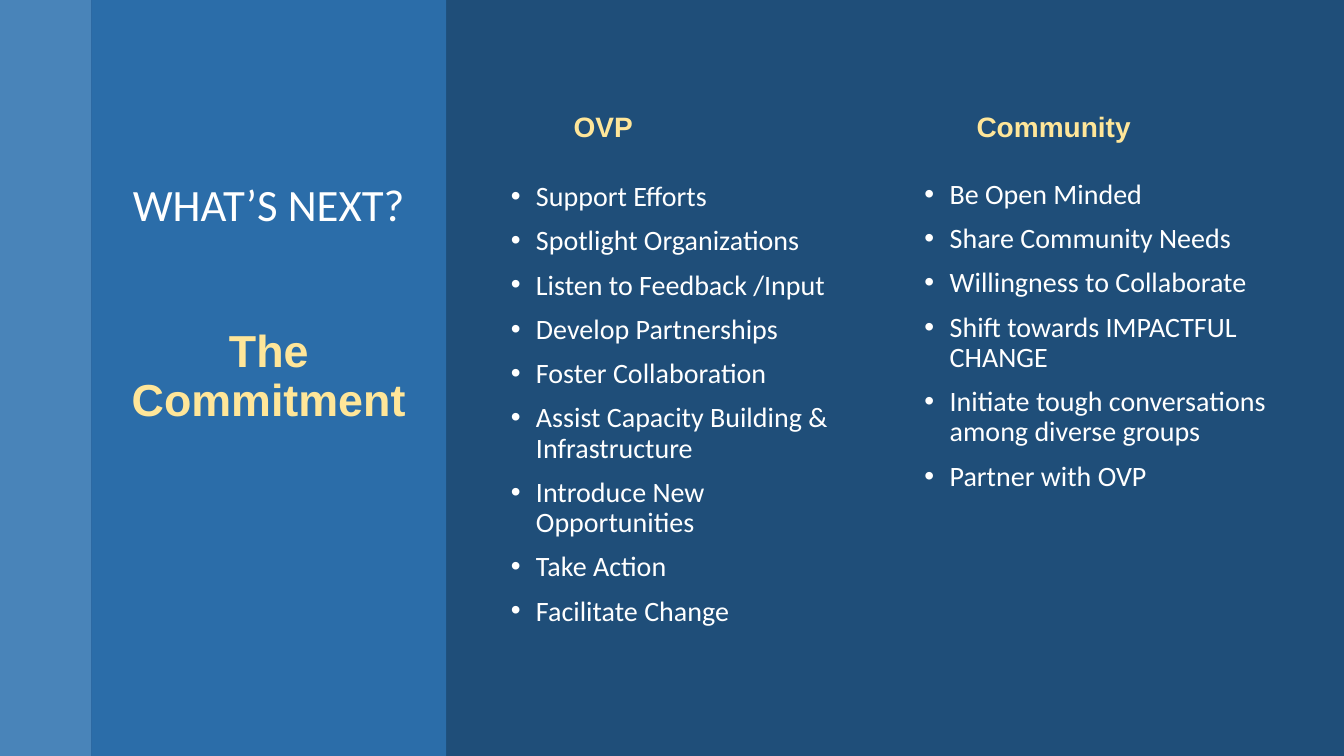
from lxml import etree
from pptx import Presentation, util as u
from pptx.dml.color import RGBColor
from pptx.enum import shapes, text
from pptx.oxml import ns

PX = 9525  # EMU in one px
WIDTH, HEIGHT = 1280, 720
TITLE_ONLY = 5

NAVY = RGBColor(0x1F, 0x4E, 0x79)
SKY = RGBColor(0x5B, 0x9B, 0xD5)
BLUE = RGBColor(0x2E, 0x75, 0xB6)
WHITE = RGBColor(0xFF, 0xFF, 0xFF)
CREAM = RGBColor(0xFF, 0xE6, 0x99)

TITLE = "WHAT’S NEXT?"
SUBTITLE = "The Commitment"
OVP = [
    "Support Efforts",
    "Spotlight Organizations",
    "Listen to Feedback /Input",
    "Develop Partnerships",
    "Foster Collaboration",
    "Assist Capacity Building & Infrastructure",
    "Introduce New Opportunities",
    "Take Action",
    "Facilitate Change",
]
COMMUNITY = [
    "Be Open Minded",
    "Share Community Needs",
    "Willingness to Collaborate",
    "Shift towards IMPACTFUL CHANGE",
    "Initiate tough conversations among diverse groups",
    "Partner with OVP",
]


def emu(box):
    return [u.Emu(length * PX) for length in box]


def add_bullet(paragraph, indent=24):
    properties = paragraph._p.get_or_add_pPr()
    properties.set("marL", str(indent * PX))
    properties.set("indent", str(-indent * PX))
    font = etree.SubElement(properties, ns.qn("a:buFont"))
    font.set("typeface", "Arial")
    etree.SubElement(properties, ns.qn("a:buChar")).set("char", "•")


def write(frame, words, *, size=20, font="Calibri", color=WHITE, bold=False,
          align=text.PP_ALIGN.LEFT, line=1.0, before=0, bullet=False):
    """Write one paragraph, using the empty first one if there is one."""
    first = not frame.text
    paragraph = frame.paragraphs[0] if first else frame.add_paragraph()
    if bullet:
        add_bullet(paragraph)
    paragraph.alignment = align
    paragraph.line_spacing = line
    paragraph.space_before = u.Pt(0 if first else before)
    run = paragraph.add_run()
    run.text = words
    run.font.size = u.Pt(size)
    run.font.name = font
    run.font.bold = bold
    run.font.color.rgb = color


def prepare(frame):
    frame.word_wrap = True
    frame.auto_size = text.MSO_AUTO_SIZE.NONE
    frame.vertical_anchor = text.MSO_ANCHOR.TOP
    return frame


def add_frame(slide, box):
    return prepare(slide.shapes.add_textbox(*emu(box)).text_frame)


def add_panel(slide, box, color, opacity):
    panel = slide.shapes.add_shape(shapes.MSO_SHAPE.RECTANGLE, *emu(box))
    panel.shadow.inherit = False
    panel.line.fill.background()
    panel.fill.solid()
    panel.fill.fore_color.rgb = color
    fill_color = panel._element.spPr.find(".//" + ns.qn("a:srgbClr"))
    etree.SubElement(fill_color, ns.qn("a:alpha")).set("val", str(opacity * 1000))


def add_title(slide, box):
    title = slide.shapes.title
    slide.shapes._spTree.append(title._element)  # in front of the panels
    title.left, title.top, title.width, title.height = emu(box)
    frame = prepare(title.text_frame)
    centre = text.PP_ALIGN.CENTER
    write(frame, TITLE, size=32, align=centre, line=0.9)
    write(frame, SUBTITLE, size=32, font="Arial", color=CREAM, bold=True,
          align=centre, line=0.9, before=70)


def add_column(slide, box, items):
    frame = add_frame(slide, box)
    for item in items:
        write(frame, item, line=0.9, before=10, bullet=True)


def add_heading(slide, box, words):
    write(add_frame(slide, box), words, font="Arial", color=CREAM, bold=True,
          align=text.PP_ALIGN.CENTER)


def build_slide(presentation):
    slide = presentation.slides.add_slide(presentation.slide_layouts[TITLE_ONLY])
    slide.background.fill.solid()
    slide.background.fill.fore_color.rgb = NAVY

    # Left side: two translucent panels and the title
    add_panel(slide, (0, 0, 87, HEIGHT), SKY, 70)
    add_panel(slide, (87, 0, 338, HEIGHT), BLUE, 80)
    add_title(slide, (87, 169, 338, 472))

    # Right side: two lists, then their headings
    add_column(slide, (477, 169, 359, 472), OVP)
    add_column(slide, (871, 167, 359, 472), COMMUNITY)
    add_heading(slide, (477, 100, 195, 42), "OVP")
    add_heading(slide, (895, 100, 217, 42), "Community")


def main():
    presentation = Presentation()
    presentation.slide_width, presentation.slide_height = emu((WIDTH, HEIGHT))
    build_slide(presentation)
    presentation.save("out.pptx")


if __name__ == "__main__":
    main()
